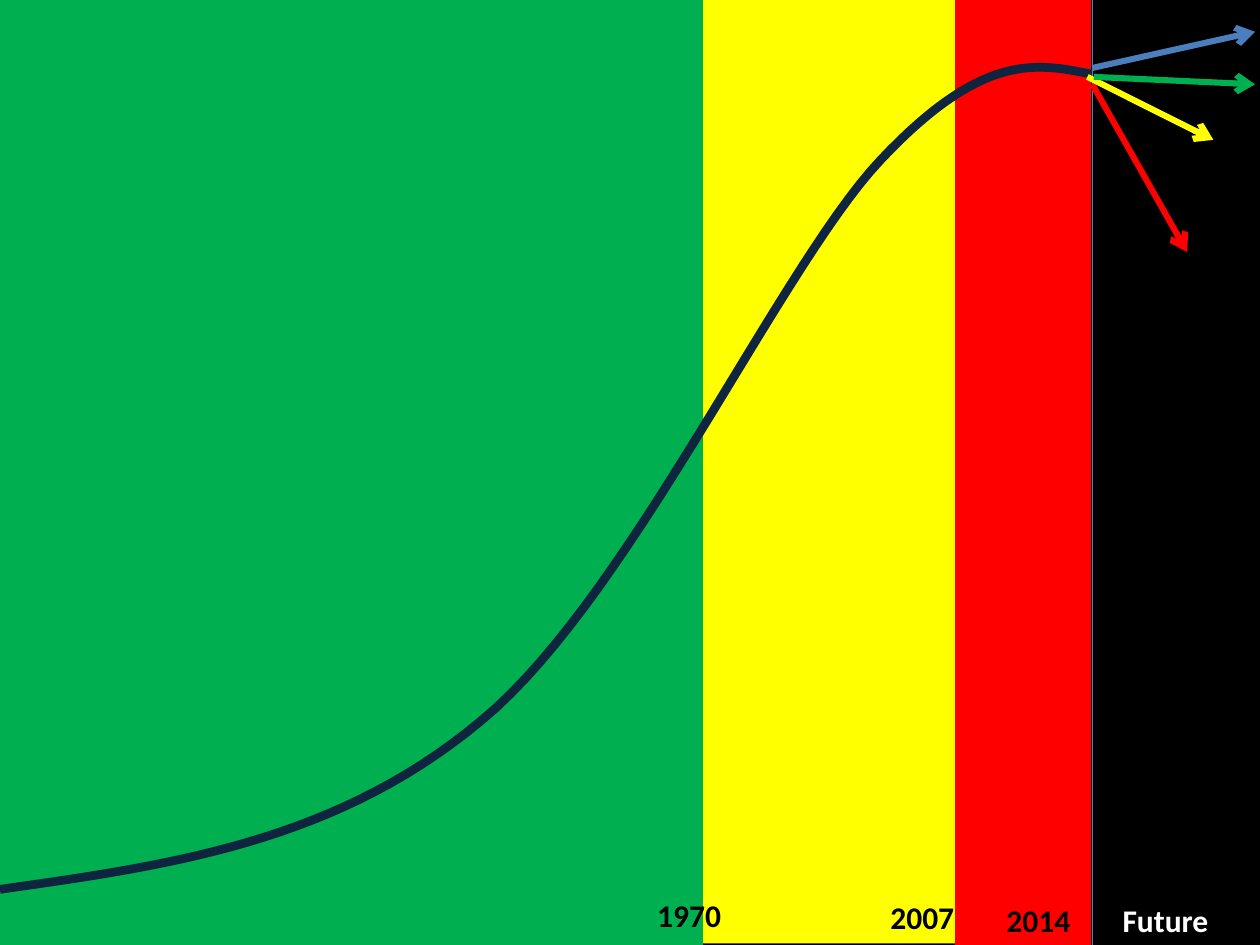
import lxml.etree
import pptx
import pptx.dml.color
import pptx.enum.shapes
import pptx.enum.text
import pptx.oxml.ns
import pptx.util

Cm = pptx.util.Cm
Pt = pptx.util.Pt
qn = pptx.oxml.ns.qn

WIDTH, HEIGHT = 25.4, 19.05
BLACK, WHITE, NAVY, BLUE = "000000", "FFFFFF", "0F243E", "4B7EBC"
RED, YELLOW, GREEN = "FF0000", "FFFF00", "00B050"

BANDS = [
    (19.25, 0, 2.75, RED),
    (14.17, -0.03, 5.08, YELLOW),
    (0, 0, 14.17, GREEN),
]
CURVE = [
    (0, 17.93),
    (3.38, 17.45), (6.76, 16.99), (9.7, 14.53),
    (12.67, 12.09), (15.72, 5.38), (17.75, 3.23),
    (19.81, 1.04), (20.9, 1.27), (22.02, 1.5),
]
SCENARIOS = [
    ((22.02, 1.7), (23.93, 5.08), RED),
    ((21.92, 1.55), (24.46, 2.82), YELLOW),
    ((22.05, 1.55), (25.3, 1.7), GREEN),
    ((22.02, 1.37), (25.3, 0.64), BLUE),
]
LABELS = [
    ("1970", 13.0, 17.93, 2.34, BLACK),
    ("2007", 17.7, 17.98, 2.34, BLACK),
    ("2014", 20.04, 18.03, 2.34, BLACK),
    ("Future", 22.38, 18.03, 2.92, WHITE),
]


def rgb(value):
    return pptx.dml.color.RGBColor.from_string(value)


def set_line(line, color, width):
    line.color.rgb = rgb(color)
    line.width = Pt(width)


def add_band(page, left, top, width, color):
    band = page.shapes.add_shape(
        pptx.enum.shapes.MSO_SHAPE.RECTANGLE,
        Cm(left), Cm(top), Cm(width), Cm(HEIGHT),
    )
    band.shadow.inherit = False
    band.fill.solid()
    band.fill.fore_color.rgb = rgb(color)
    band.line.fill.background()


def bezier_point(controls, t):
    weights = ((1 - t) ** 3, 3 * t * (1 - t) ** 2, 3 * t**2 * (1 - t), t**3)
    return tuple(
        Cm(sum(weight * value for weight, value in zip(weights, values)))
        for values in zip(*controls)
    )


def add_curve(page, points, color, width, steps=30):
    vertices = [
        bezier_point(points[first:first + 4], step / steps)
        for first in range(0, len(points) - 1, 3)
        for step in range(1, steps + 1)
    ]
    start_x, start_y = points[0]
    builder = page.shapes.build_freeform(Cm(start_x), Cm(start_y))
    builder.add_line_segments(vertices, close=False)
    curve = builder.convert_to_shape()
    curve.shadow.inherit = False
    curve.fill.background()
    set_line(curve.line, color, width)


def add_line(page, start, end, color, width, arrow=False):
    connector = page.shapes.add_connector(
        pptx.enum.shapes.MSO_CONNECTOR.STRAIGHT,
        *(Cm(value) for value in start + end),
    )
    set_line(connector.line, color, width)
    properties = connector._element.spPr
    if arrow:
        outline = properties.find(qn("a:ln"))
        lxml.etree.SubElement(outline, qn("a:tailEnd"), type="arrow")
    lxml.etree.SubElement(properties, qn("a:effectLst"))


def add_label(page, text, left, top, width, color):
    box = page.shapes.add_textbox(Cm(left), Cm(top), Cm(width), Cm(1.02))
    frame = box.text_frame
    frame.word_wrap = True
    frame.auto_size = pptx.enum.text.MSO_AUTO_SIZE.SHAPE_TO_FIT_TEXT
    para = frame.paragraphs[0]
    para.text = text
    para.font.name = "Calibri"
    para.font.size = Pt(18)
    para.font.bold = True
    para.font.color.rgb = rgb(color)


def main():
    deck = pptx.Presentation()
    deck.slide_width, deck.slide_height = Cm(WIDTH), Cm(HEIGHT)
    page = deck.slides.add_slide(deck.slide_layouts[6])
    page.background.fill.solid()
    page.background.fill.fore_color.rgb = rgb(BLACK)

    for band in BANDS:
        add_band(page, *band)
    add_curve(page, CURVE, NAVY, 5)
    add_line(page, (22.02, -0.05), (22.02, 19.1), BLUE, 0.75)
    for start, end, color in SCENARIOS:
        add_line(page, start, end, color, 3.5, arrow=True)
    for label in LABELS:
        add_label(page, *label)
    deck.save("out.pptx")


if __name__ == "__main__":
    main()
